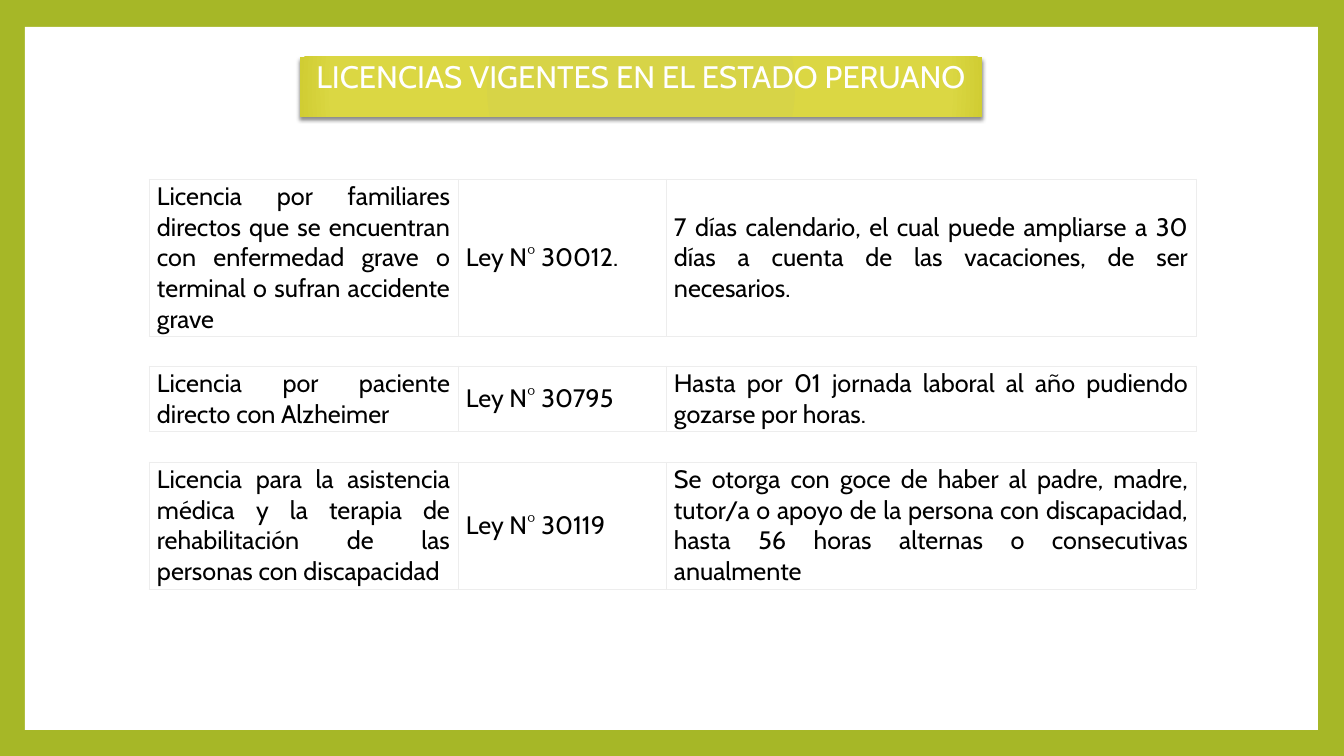
import pptx
import pptx.dml.color
import pptx.enum.shapes
import pptx.enum.text
import pptx.oxml
import pptx.oxml.ns
import pptx.util

EMU_PER_PX = 914400 / 100.8
FONT = "Cabin"
COLORS = {
    "frame": "A6B727",
    "white": "FFFFFF",
    "black": "000000",
    "border": "EDEDED",
    "banner_start": "D7D447",
    "banner_middle": "DBD743",
    "banner_end": "D0CD33",
}
ALIGN = pptx.enum.text.PP_ALIGN
ANCHOR = pptx.enum.text.MSO_ANCHOR

TABLE_LEFT = 149
COLUMN_WIDTHS = (309, 208, 530)
COLUMN_ALIGNMENTS = (ALIGN.JUSTIFY, ALIGN.LEFT, ALIGN.JUSTIFY)
LICENSES = [
    (179, 155, (
        "Licencia por familiares directos que se encuentran con enfermedad "
        "grave o terminal o sufran accidente grave",
        "Ley N° 30012.",
        "7 días calendario, el cual puede ampliarse a 30 días a cuenta de las "
        "vacaciones, de ser necesarios.")),
    (366, 65, (
        "Licencia por paciente directo con Alzheimer",
        "Ley N° 30795",
        "Hasta por 01 jornada laboral al año pudiendo gozarse por horas.")),
    (462, 125, (
        "Licencia para la asistencia médica y la terapia de rehabilitación "
        "de las personas con discapacidad",
        "Ley N° 30119",
        "Se otorga con goce de haber al padre, madre, tutor/a o apoyo de la "
        "persona con discapacidad, hasta 56 horas alternas o consecutivas "
        "anualmente")),
]


def px(length):
    return pptx.util.Emu(round(length * EMU_PER_PX))


def rgb(name):
    return pptx.dml.color.RGBColor.from_string(COLORS[name])


def fill_solid(fill, color):
    fill.solid()
    fill.fore_color.rgb = rgb(color)


def drawing_xml(markup):
    """Parse one DrawingML element whose opening tag ends with the mark NS."""
    return pptx.oxml.parse_xml(markup.replace("NS", pptx.oxml.ns.nsdecls("a"), 1))


def write_text(text_frame, text, *, size, color, align, line_spacing=1.0):
    paragraph = text_frame.paragraphs[0]
    paragraph.alignment = align
    paragraph.line_spacing = line_spacing
    paragraph.space_before = pptx.util.Pt(0)
    run = paragraph.add_run()
    run.text = text
    run.font.name = FONT
    run.font.size = pptx.util.Pt(size)
    run.font.color.rgb = rgb(color)


def add_panel(slide, left, top, width, height):
    panel = slide.shapes.add_shape(
        pptx.enum.shapes.MSO_SHAPE.RECTANGLE,
        px(left), px(top), px(width), px(height))
    panel.shadow.inherit = False
    fill_solid(panel.fill, "white")
    panel.line.fill.background()


def style_banner(shape):
    """Give the title its radial gradient and soft shadow."""
    stops = ((0, "banner_start"), (90, "banner_middle"), (100, "banner_end"))
    stop_markup = "".join(
        f'<a:gs pos="{position * 1000}"><a:srgbClr val="{COLORS[color]}"/></a:gs>'
        for position, color in stops)
    properties = shape.element.spPr
    properties.append(drawing_xml(
        '<a:prstGeom NS prst="rect"><a:avLst/></a:prstGeom>'))
    properties.append(drawing_xml(
        f'<a:gradFill NS rotWithShape="1"><a:gsLst>{stop_markup}</a:gsLst>'
        '<a:path path="circle"><a:fillToRect l="100000" t="100000" '
        'r="100000" b="100000"/></a:path></a:gradFill>'))
    properties.append(drawing_xml(
        f'<a:effectLst NS><a:outerShdw blurRad="{pptx.util.Pt(3)}" '
        f'dist="{pptx.util.Pt(2)}" dir="5400000" rotWithShape="0">'
        f'<a:srgbClr val="{COLORS["black"]}"><a:alpha val="45000"/></a:srgbClr>'
        '</a:outerShdw></a:effectLst>'))


def add_title(slide, text, left, top, width, height):
    title = slide.shapes.title
    title.left, title.top = px(left), px(top)
    title.width, title.height = px(width), px(height)
    style_banner(title)
    frame = title.text_frame
    frame.word_wrap = True
    frame.auto_size = pptx.enum.text.MSO_AUTO_SIZE.NONE
    frame.vertical_anchor = ANCHOR.TOP
    write_text(frame, text, size=22.2, color="white", align=ALIGN.CENTER,
               line_spacing=0.9)


def set_borders(cell):
    properties = cell._tc.get_or_add_tcPr()
    for index, side in enumerate("LRTB"):
        properties.insert(index, drawing_xml(
            f'<a:ln{side} NS w="{pptx.util.Pt(0.75)}"><a:solidFill>'
            f'<a:srgbClr val="{COLORS["border"]}"/></a:solidFill></a:ln{side}>'))


def add_license_table(slide, top, height, texts):
    table = slide.shapes.add_table(
        1, len(texts), px(TABLE_LEFT), px(top),
        px(sum(COLUMN_WIDTHS)), px(height)).table
    table.first_row = False
    table.horz_banding = False
    for column, width in zip(table.columns, COLUMN_WIDTHS):
        column.width = px(width)
    for cell, text, align in zip(table.rows[0].cells, texts, COLUMN_ALIGNMENTS):
        cell.margin_left = cell.margin_right = px(8)
        cell.margin_top = cell.margin_bottom = px(2)
        cell.vertical_anchor = ANCHOR.MIDDLE
        fill_solid(cell.fill, "white")
        set_borders(cell)
        write_text(cell.text_frame, text, size=18, color="black", align=align)


def main():
    presentation = pptx.Presentation()
    presentation.slide_width = px(1344)
    presentation.slide_height = px(756)
    slide = presentation.slides.add_slide(presentation.slide_layouts[5])
    fill_solid(slide.background.fill, "frame")
    add_panel(slide, 25, 27, 1293, 703)
    # The title placeholder comes first, so it is raised above the panel.
    slide.shapes.element.append(slide.shapes.title.element)
    add_title(slide, "LICENCIAS VIGENTES EN EL ESTADO PERUANO", 300, 57, 682, 60)
    for top, height, texts in LICENSES:
        add_license_table(slide, top, height, texts)
    presentation.save("out.pptx")


if __name__ == "__main__":
    main()
